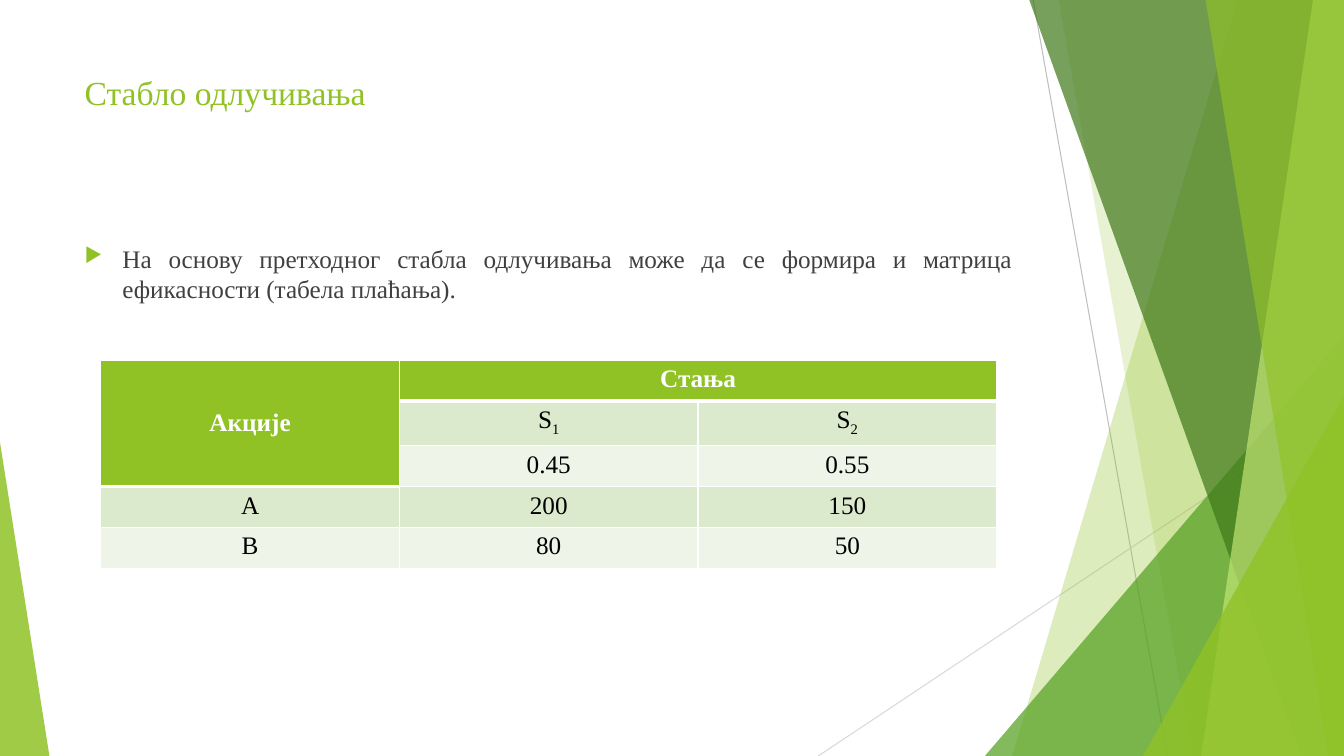
from lxml import etree
from pptx import Presentation
from pptx import util as u
from pptx.dml.color import RGBColor
from pptx.enum import shapes, text
from pptx.oxml.ns import qn

GREEN, DARK, WHITE = "90C226", "404040", "FFFFFF"
WIDTH, HEIGHT, TOP = 960, 540, -0.67


def color(code):
    return RGBColor.from_string(code)


def add_xml(parent, tag, **attributes):
    return etree.SubElement(parent, qn(tag), attributes)


class SlideBuilder:
    font_name = "Times New Roman"

    def __init__(self, slide):
        self.slide = slide
        self.shapes = slide.shapes

    def style(self, paragraph, size, code, bold=False, align=text.PP_ALIGN.LEFT):
        paragraph.alignment = align
        font = paragraph.font
        font.name, font.size, font.bold = self.font_name, u.Pt(size), bold
        font.color.rgb = color(code)

    def paint(self, shape, code, opacity):
        shape.shadow.inherit = False
        shape.fill.solid()
        shape.fill.fore_color.rgb = color(code)
        shape.line.fill.background()
        add_xml(shape.element.spPr.find(".//" + qn("a:srgbClr")), "a:alpha", val=str(opacity * 1000))

    def line(self, x1, y1, x2, y2, code):
        ray = self.shapes.add_connector(
            shapes.MSO_CONNECTOR.STRAIGHT, u.Pt(x1), u.Pt(y1), u.Pt(x2), u.Pt(y2))
        ray.line.color.rgb = color(code)
        ray.line.width = u.Pt(0.75)
        add_xml(ray.element.spPr, "a:effectLst")

    def band(self, top_left, top_right, bottom_right, bottom_left, code, opacity):
        corners = [(top_right, TOP), (bottom_right, HEIGHT), (bottom_left, HEIGHT)]
        outline = self.shapes.build_freeform(u.Pt(top_left), u.Pt(TOP), 1.0)
        outline.add_line_segments([(u.Pt(x), u.Pt(y)) for x, y in corners])
        self.paint(outline.convert_to_shape(), code, opacity)

    def corner(self, left, top, width, apex, code, opacity):
        wedge = self.shapes.add_shape(
            shapes.MSO_SHAPE.ISOSCELES_TRIANGLE,
            u.Pt(left), u.Pt(top), u.Pt(width), u.Pt(HEIGHT - top))
        wedge.adjustments[0] = apex
        self.paint(wedge, code, opacity)

    def title(self, words, left, top, width, height):
        heading = self.shapes.title
        heading.left, heading.top = u.Pt(left), u.Pt(top)
        heading.width, heading.height = u.Pt(width), u.Pt(height)
        heading.element.getparent().append(heading.element)
        frame = heading.text_frame
        frame.text = words
        frame.auto_size = text.MSO_AUTO_SIZE.NONE
        frame.vertical_anchor = text.MSO_ANCHOR.TOP
        self.style(frame.paragraphs[0], 24, GREEN)

    def bullet(self, words, left, top, width, height):
        body = self.shapes.add_textbox(u.Pt(left), u.Pt(top), u.Pt(width), u.Pt(height))
        body.text_frame.word_wrap = True
        paragraph = body.text_frame.paragraphs[0]
        paragraph.text = words
        props = paragraph._p.get_or_add_pPr()
        props.set("marL", str(u.Pt(27)))
        props.set("indent", str(u.Pt(-27)))
        add_xml(add_xml(props, "a:buClr"), "a:srgbClr", val=GREEN)
        add_xml(props, "a:buSzPct", val="80000")
        add_xml(props, "a:buChar", char="▶")
        paragraph.space_before = u.Pt(10)
        self.style(paragraph, 18, DARK, align=text.PP_ALIGN.JUSTIFY)

    def borders(self, cell, widths):
        props = cell._tc.get_or_add_tcPr()
        for side, width in zip("LRTB", widths):
            edge = add_xml(props, f"a:ln{side}", w=str(u.Pt(width)))
            add_xml(add_xml(edge, "a:solidFill"), "a:srgbClr", val=WHITE)

    def cell(self, cell, words, fill, code, bold, widths):
        self.borders(cell, widths)
        cell.fill.solid()
        cell.fill.fore_color.rgb = color(fill)
        paragraph = cell.text_frame.paragraphs[0]
        base, _, subscript = words.partition("_")
        paragraph.text = base
        if subscript:
            index = paragraph.add_run()
            index.text = subscript
            index._r.get_or_add_rPr().set("baseline", "-25000")
        self.style(paragraph, 18, code, bold, text.PP_ALIGN.CENTER)

    def payoff_table(self, rows, left, top, width, row_height):
        payoffs = self.shapes.add_table(
            len(rows), len(rows[0]), u.Pt(left), u.Pt(top),
            u.Pt(width), u.Pt(row_height * len(rows))).table
        payoffs.horz_banding = False

        def is_header(r, c):
            return r == 0 or (c == 0 and r < 3)

        for r, row in enumerate(rows):
            for c, words in enumerate(row):
                header = is_header(r, c)
                under_header = r > 0 and not header and is_header(r - 1, c)
                fill = GREEN if header else ("EEF4E8", "DBE9CD")[r % 2]
                widths = (1, 1, 3 if under_header else 1, 3 if header else 1)
                self.cell(payoffs.cell(r, c), words, fill,
                          WHITE if header else "000000", header, widths)
        payoffs.cell(0, 0).merge(payoffs.cell(2, 0))
        payoffs.cell(0, 1).merge(payoffs.cell(0, 2))
        payoffs.cell(0, 0).vertical_anchor = text.MSO_ANCHOR.MIDDLE


def main():
    deck = Presentation()
    deck.slide_width, deck.slide_height = u.Pt(WIDTH), u.Pt(HEIGHT)
    page = SlideBuilder(deck.slides.add_slide(deck.slide_layouts[5]))

    page.line(738, 0, 834, HEIGHT, "BFBFBF")
    page.line(WIDTH, 290, 584.5, HEIGHT, "D9D9D9")
    page.band(884, WIDTH, WIDTH, 723, GREEN, 30)
    page.band(756, WIDTH, WIDTH, 852, GREEN, 20)
    page.corner(703.5, 240, 256.5, 1, "54A021", 72)
    page.band(735, WIDTH, WIDTH, 929.5, "3F7819", 70)
    page.band(938, WIDTH, WIDTH, 858, "C0E474", 70)
    page.band(861, WIDTH, WIDTH, 949, GREEN, 65)
    page.corner(816.5, 283, 143.5, 1, GREEN, 80)
    page.corner(0, 316, 35.3, 0, GREEN, 85)

    page.title("Стабло одлучивања", 53.3, 48, 677, 104)
    page.bullet("На основу претходног стабла одлучивања може да се формира "
                "и матрица ефикасности (табела плаћања).", 53.3, 170, 677, 305.5)
    page.payoff_table([
        ("Акције", "Стања", ""),
        ("", "S_1", "S_2"),
        ("", "0.45", "0.55"),
        ("A", "200", "150"),
        ("B", "80", "50"),
    ], 72, 257.3, 640, 29.2)
    deck.save("out.pptx")


if __name__ == "__main__":
    main()
